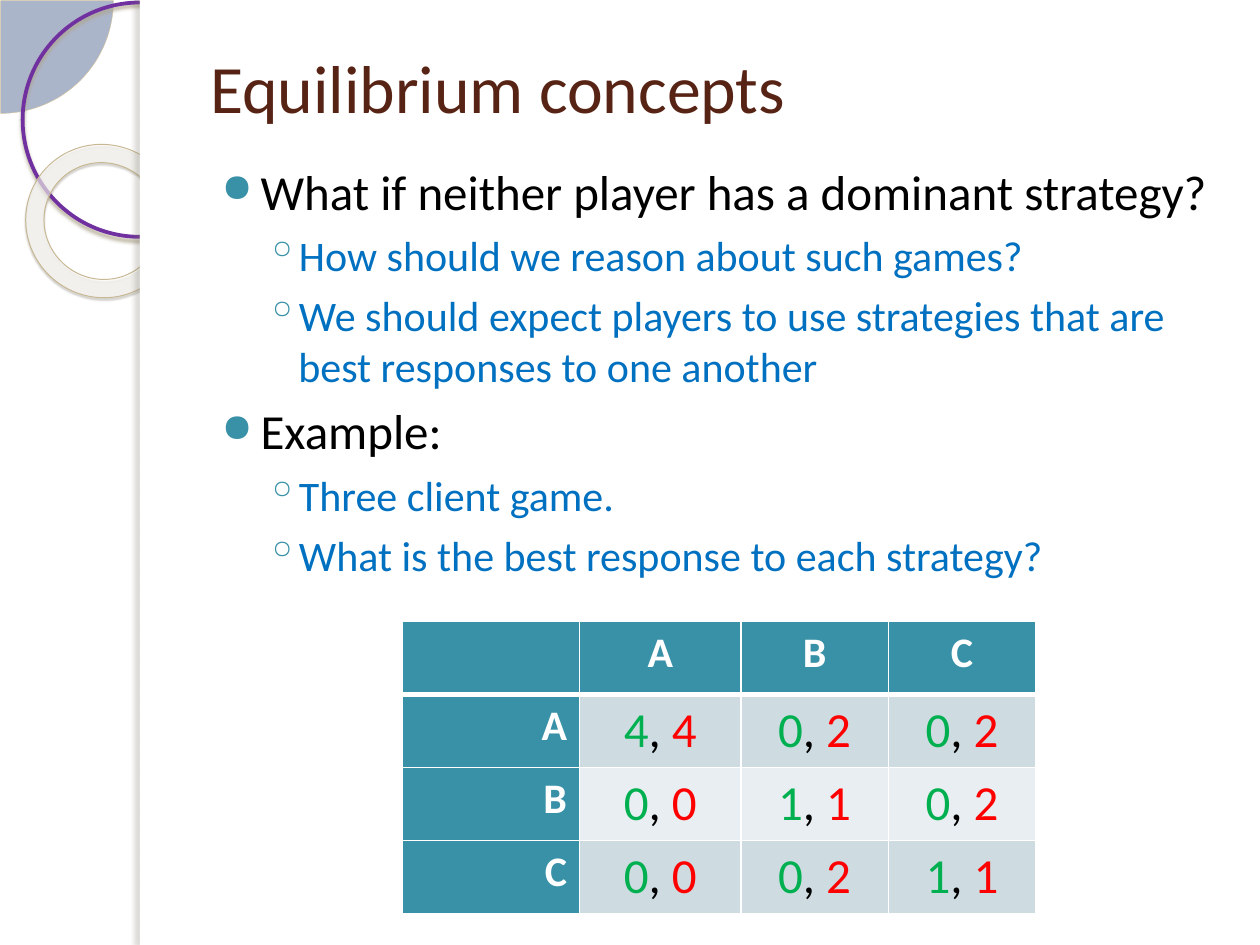
from lxml import etree
from pptx import Presentation
from pptx.dml.color import RGBColor
from pptx.enum.shapes import MSO_SHAPE as Preset
from pptx.enum.text import MSO_ANCHOR as Anchor, MSO_AUTO_SIZE as AutoSize, PP_ALIGN as Align
from pptx.oxml import parse_xml
from pptx.oxml.ns import nsdecls, qn
from pptx.util import Inches, Pt

COLORS = {
    "white": "FFFFFF", "black": "000000", "title": "572314", "teal": "3891A7",
    "blue": "0070C0", "green": "00B050", "red": "FF0000", "navy": "002060",
    "purple": "7030A0", "sand": "D3C39F", "ring": "FFFEFB", "ring_line": "C7B893",
    "circle_shadow": "B0A68F", "ring_shadow": "5A5444", "bar_shadow": "736F63",
    "band_dark": "CEDCE1", "band_light": "E8EEF1",
}
FONT = "Calibri"


def rgb(name):
    return RGBColor.from_string(COLORS[name])


def add_decoration(preset, box, fill=None, alpha=100, line=None, shadow=None):
    """Line is (colour, points); shadow is (colour, alpha, blur, distance, degrees)."""
    shape = slide.shapes.add_shape(preset, *map(Inches, box))
    shape.shadow.inherit = False
    properties = shape._element.spPr
    if fill:
        shape.fill.solid()
        shape.fill.fore_color.rgb = rgb(fill)
        if alpha < 100:
            color = properties.find(qn("a:solidFill"))[0]
            etree.SubElement(color, qn("a:alpha"), val=str(alpha * 1000))
    else:
        shape.fill.background()
    if line:
        shape.line.color.rgb = rgb(line[0])
        shape.line.width = Pt(line[1])
    else:
        shape.line.fill.background()
    if shadow:
        color, opacity, blur, distance, angle = shadow
        properties.find(qn("a:effectLst")).append(parse_xml(
            f'<a:outerShdw {nsdecls("a")} blurRad="{Pt(blur)}" dist="{Pt(distance)}" '
            f'dir="{angle * 60000}" algn="tl" rotWithShape="0">'
            f'<a:srgbClr val="{COLORS[color]}"><a:alpha val="{opacity * 1000}"/></a:srgbClr>'
            '</a:outerShdw>'))
    return shape


presentation = Presentation()
presentation.slide_width, presentation.slide_height = Inches(10), Inches(7.5)
slide = presentation.slides.add_slide(presentation.slide_layouts[5])

# Circles on the left, partly covered by the white page
quarter = add_decoration(Preset.PIE, (-0.89, -0.89, 1.79, 1.79), "navy", 33, ("sand", 0.25))
quarter.adjustments[0], quarter.adjustments[1] = 0, 54
add_decoration(Preset.OVAL, (0.18, 0.02, 1.86, 1.86), line=("purple", 2.15),
               shadow=("circle_shadow", 85, 2, 2, 90))
ring = add_decoration(Preset.DONUT, (0.2, 1.15, 1.23, 1.21), "ring", 60, ("ring_line", 0.58),
                      ("ring_shadow", 35, 1, 1.2, 75))
ring.adjustments[0] = 0.12
ring.rotation = 38.6
add_decoration(Preset.RECTANGLE, (1.11, 0, 8.89, 7.5), "white")
add_decoration(Preset.RECTANGLE, (1.11, 0, 0.08, 7.5), "white",
               shadow=("bar_shadow", 25, 3, 3, 180))

# Title, brought in front of the page
title = slide.shapes.title
slide.shapes._spTree.append(title._element)
title.left, title.top, title.width, title.height = map(Inches, (1.57, 0.3, 8.2, 0.77))
title.text_frame.text = "Equilibrium concepts"
title.text_frame.auto_size = AutoSize.NONE
title.text_frame.vertical_anchor = Anchor.MIDDLE
paragraph = title.text_frame.paragraphs[0]
paragraph.alignment = Align.LEFT
paragraph.font.name, paragraph.font.size = FONT, Pt(38.7)
paragraph.font.color.rgb = rgb("title")

# Bulleted text
POINTS = [
    (0, "What if neither player has a dominant strategy?"),
    (1, "How should we reason about such games?"),
    (1, "We should expect players to use strategies that are best responses to one another"),
    (0, "Example:"),
    (1, "Three client game."),
    (1, "What is the best response to each strategy?"),
]
# Per level: bullet, bullet size %, margin, indent, space before, text size, colour
LEVELS = [("●", 80, 0.4, -0.31, 6, 28, "black"), ("◦", 100, 0.7, -0.26, 5.5, 24, "blue")]
body = slide.shapes.add_textbox(*map(Inches, (1.57, 1.23, 8.2, 3.6))).text_frame
body.word_wrap = True
for index, (level, text) in enumerate(POINTS):
    bullet, bullet_size, margin, indent, space, size, color = LEVELS[level]
    paragraph = body.paragraphs[0] if index == 0 else body.add_paragraph()
    paragraph.text = text
    paragraph.level = level
    paragraph.space_before = Pt(space if index else 0)
    properties = paragraph._p.get_or_add_pPr()
    properties.set("marL", str(Inches(margin)))
    properties.set("indent", str(Inches(indent)))
    bullet_color = etree.SubElement(properties, qn("a:buClr"))
    etree.SubElement(bullet_color, qn("a:srgbClr"), val=COLORS["teal"])
    etree.SubElement(properties, qn("a:buSzPct"), val=str(bullet_size * 1000))
    etree.SubElement(properties, qn("a:buChar"), char=bullet)
    paragraph.font.name, paragraph.font.size = FONT, Pt(size)
    paragraph.font.color.rgb = rgb(color)

# Payoff table
STRATEGIES = ["A", "B", "C"]
PAYOFFS = [["4, 4", "0, 2", "0, 2"], ["0, 0", "1, 1", "0, 2"], ["0, 0", "0, 2", "1, 1"]]
rows = [["", *STRATEGIES]] + [[name, *line] for name, line in zip(STRATEGIES, PAYOFFS)]
table = slide.shapes.add_table(4, 4, *map(Inches, (3.19, 4.93, 5.03, 2.32))).table
for column, width in zip(table.columns, (1.41, 1.28, 1.17, 1.17)):
    column.width = Inches(width)
for row_index, row in enumerate(rows):
    for column_index, text in enumerate(row):
        cell = table.cell(row_index, column_index)
        is_header = row_index == 0 or column_index == 0
        properties = cell._tc.get_or_add_tcPr()
        for side in "LRTB":
            heavy = (row_index, side) in ((0, "B"), (1, "T"))
            properties.append(parse_xml(
                f'<a:ln{side} {nsdecls("a")} w="{Pt(3 if heavy else 1)}"><a:solidFill>'
                f'<a:srgbClr val="{COLORS["white"]}"/></a:solidFill></a:ln{side}>'))
        cell.fill.solid()
        band = "band_dark" if row_index % 2 else "band_light"
        cell.fill.fore_color.rgb = rgb("teal" if is_header else band)
        paragraph = cell.text_frame.paragraphs[0]
        paragraph.alignment = Align.RIGHT if column_index == 0 else Align.CENTER
        paragraph.font.name = FONT
        paragraph.font.size = Pt(24 if is_header else 28)
        paragraph.font.bold = is_header
        if is_header:
            paragraph.text = text
            paragraph.font.color.rgb = rgb("white")
        else:
            first, second = text.split(", ")
            for part, color in ((first, "green"), (", ", "black"), (second, "red")):
                run = paragraph.add_run()
                run.text = part
                run.font.color.rgb = rgb(color)

presentation.save("out.pptx")
